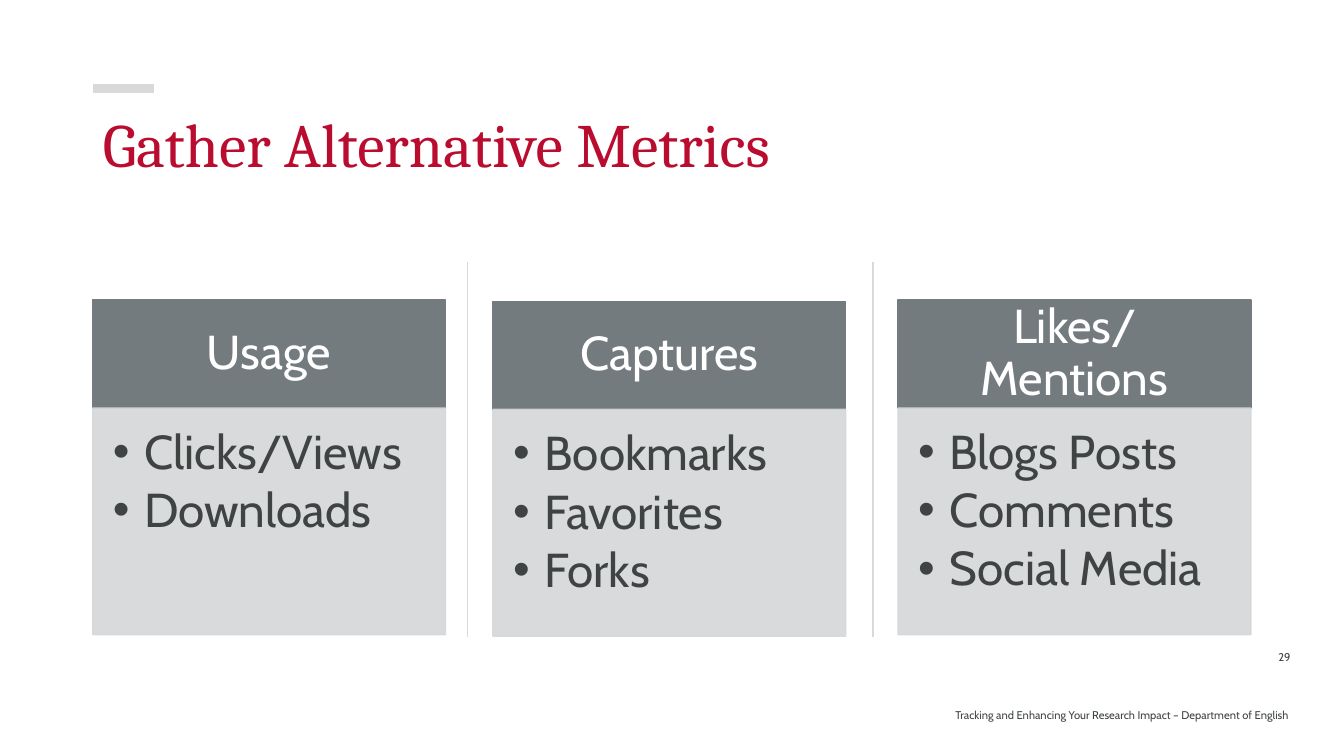
from lxml import etree
from pptx import Presentation
from pptx.dml.color import RGBColor
from pptx.enum.shapes import MSO_CONNECTOR, MSO_SHAPE
from pptx.enum.text import MSO_ANCHOR, PP_ALIGN
from pptx.oxml.ns import qn
from pptx.util import Pt

RECTANGLE = MSO_SHAPE.RECTANGLE
STRAIGHT = MSO_CONNECTOR.STRAIGHT
TOP, MIDDLE = MSO_ANCHOR.TOP, MSO_ANCHOR.MIDDLE
LEFT, CENTER, RIGHT = PP_ALIGN.LEFT, PP_ALIGN.CENTER, PP_ALIGN.RIGHT

RED, SLATE, SILVER = "BA0C2F", "737B7E", "D5D7D8"
RULE, INK, WHITE = "D9D9D9", "3F4443", "FFFFFF"
MARGIN, COLUMN_WIDTH, HEADER_HEIGHT, LIST_HEIGHT = 66.24, 252, 77, 162

# Left, top, heading and items of each column
COLUMNS = [
    (MARGIN, 214.4, "Usage", ["Clicks/Views", "Downloads"]),
    (352.1, 215.4, "Captures", ["Bookmarks", "Favorites", "Forks"]),
    (641.5, 214.4, "Likes/Mentions", ["Blogs Posts", "Comments", "Social Media"]),
]


def rgb(hex_color):
    return RGBColor.from_string(hex_color)


def add_bullet(para, indent):
    properties = para._p.get_or_add_pPr()
    properties.set("marL", str(Pt(indent)))
    properties.set("indent", str(-Pt(indent)))
    etree.SubElement(properties, qn("a:buFont"), typeface="Arial")
    etree.SubElement(properties, qn("a:buChar"), char="•")


def write(shape, lines, size, color, font="Cabin", align=LEFT, anchor=MIDDLE,
          insets=(7.2, 3.6, 7.2, 3.6), spacing=1.0, after=0, indent=0):
    """Fill a shape with one paragraph per line; an indent makes them bullets."""
    frame = shape.text_frame
    frame.word_wrap = True
    frame.vertical_anchor = anchor
    (frame.margin_left, frame.margin_top,
     frame.margin_right, frame.margin_bottom) = map(Pt, insets)
    for number, line in enumerate(lines):
        para = frame.add_paragraph() if number else frame.paragraphs[0]
        if indent:
            add_bullet(para, indent)
        para.alignment = align
        para.line_spacing = spacing
        para.space_before = Pt(0)
        para.space_after = Pt(after)
        span = para.add_run()
        span.text = line
        span.font.name = font
        span.font.size = Pt(size)
        span.font.color.rgb = rgb(color)


def set_opacity(paint, percent):
    """Make a solid a:solidFill inside the given element partly transparent."""
    color = paint.find(qn("a:solidFill")).find(qn("a:srgbClr"))
    etree.SubElement(color, qn("a:alpha"), val=str(percent * 1000))


def add_panel(page, left, top, width, height, color, opacity=100):
    panel = page.shapes.add_shape(RECTANGLE, *map(Pt, (left, top, width, height)))
    panel.shadow.inherit = False
    panel.fill.solid()
    panel.fill.fore_color.rgb = rgb(color)
    panel.line.color.rgb = rgb(color)
    panel.line.width = Pt(1)
    if opacity < 100:
        properties = panel._element.spPr
        set_opacity(properties, opacity)
        set_opacity(properties.find(qn("a:ln")), opacity)
    return panel


def add_rule(page, x1, y1, x2, y2, width):
    rule = page.shapes.add_connector(STRAIGHT, *map(Pt, (x1, y1, x2, y2)))
    rule.line.color.rgb = rgb(RULE)
    rule.line.width = Pt(width)
    etree.SubElement(rule._element.spPr, qn("a:effectLst"))


def add_title(page, left, top, width, height, text):
    add_rule(page, left, top - 14.4, left + 43.5, top - 14.4, 6.25)
    title = page.shapes.title
    title.left, title.top, title.width, title.height = map(Pt, (left, top, width, height))
    write(title, [text], 44, RED, font="Cambria", anchor=TOP, spacing=0.9)


def add_column(page, left, top, heading, items):
    header = add_panel(page, left, top, COLUMN_WIDTH, HEADER_HEIGHT, SLATE)
    write(header, [heading], 34, WHITE, align=CENTER,
          insets=(18.7, 10.8, 18.7, 10.8), spacing=0.9)
    body = add_panel(page, left, top + HEADER_HEIGHT, COLUMN_WIDTH, LIST_HEIGHT,
                     SILVER, opacity=90)
    write(body, items, 34, INK, anchor=TOP, insets=(14.4, 14.4, 18.7, 21.6),
          spacing=0.9, after=5, indent=22.5)


def add_note(page, left, top, width, height, text):
    note = page.shapes.add_textbox(*map(Pt, (left, top, width, height)))
    write(note, [text], 8, INK, align=RIGHT)


def main():
    deck = Presentation()
    deck.slide_width, deck.slide_height = Pt(960), Pt(540)
    page = deck.slides.add_slide(deck.slide_layouts[5])
    for x in (334, 623.5):
        add_rule(page, x, 187.2, x, 455, 1)
    add_title(page, MARGIN, 77.8, 828, 66, "Gather Alternative Metrics")
    for column in COLUMNS:
        add_column(page, *column)
    add_note(page, 604, 496, 324, 29,
             "Tracking and Enhancing Your Research Impact – Department of English")
    add_note(page, 890, 455, 39, 29, "29")
    deck.save("out.pptx")


if __name__ == "__main__":
    main()
